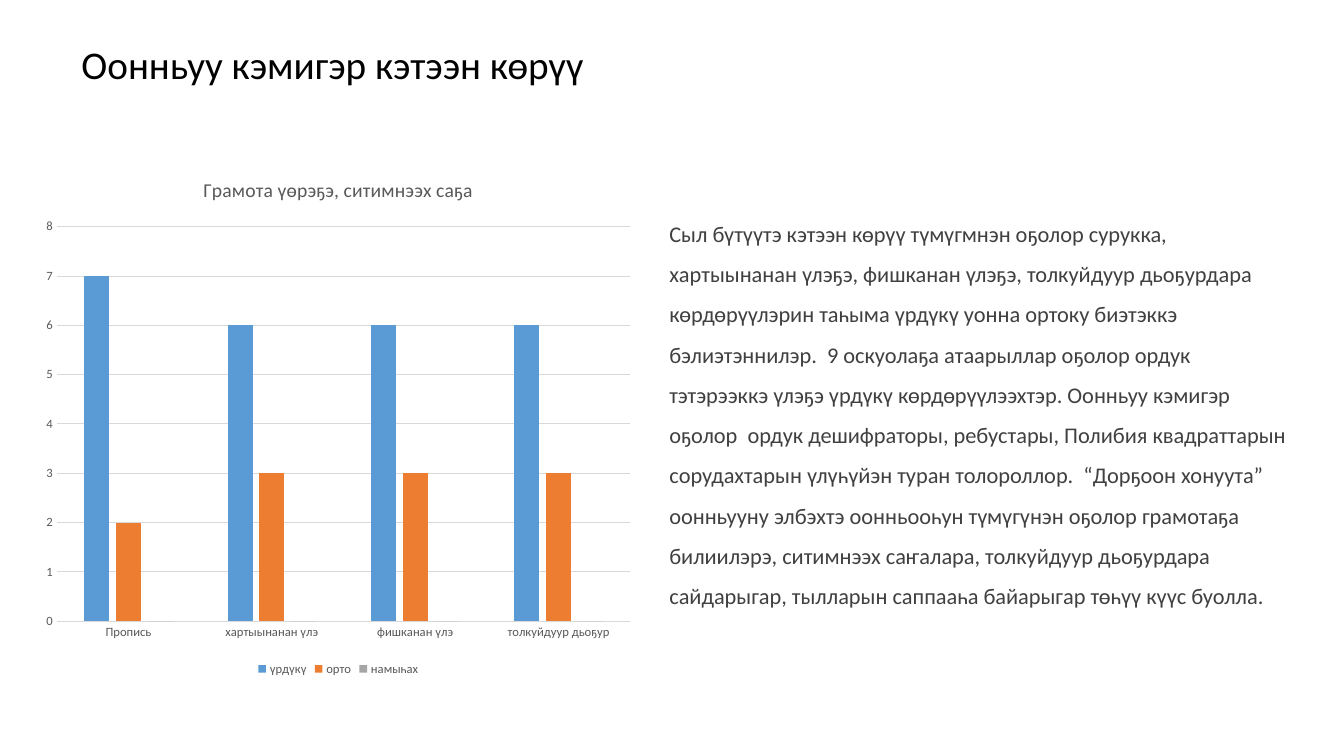
from pptx import Presentation
from pptx.chart.data import CategoryChartData
from pptx.dml.color import RGBColor
from pptx.enum.chart import XL_CHART_TYPE, XL_LEGEND_POSITION, XL_TICK_MARK
from pptx.enum.text import MSO_ANCHOR
from pptx.util import Pt

PX = 9144
FONT = "Calibri"
COLORS = {
    "title": "000000",
    "body": "404040",
    "label": "595959",
    "rule": "D9D9D9",
    "high": "5B9BD5",
    "middle": "ED7D31",
    "low": "A5A5A5",
}
TITLE = "Оонньуу кэмигэр кэтээн көрүү"
CHART_TITLE = "Грамота үөрэҕэ, ситимнээх саҕа"
CATEGORIES = ["Пропись", "хартыынанан үлэ", "фишканан үлэ", "толкуйдуур дьоҕур"]
SERIES = [
    ("үрдүкү", (7, 6, 6, 6), "high"),
    ("орто", (2, 3, 3, 3), "middle"),
    ("намыһах", (0, 0, 0, 0), "low"),
]
BODY = (
    "Сыл бүтүүтэ кэтээн көрүү түмүгмнэн оҕолор сурукка, "
    "хартыынанан үлэҕэ, фишканан үлэҕэ, толкуйдуур дьоҕурдара "
    "көрдөрүүлэрин таһыма үрдүкү уонна ортоку биэтэккэ "
    "бэлиэтэннилэр.  9 оскуолаҕа атаарыллар оҕолор ордук "
    "тэтэрээккэ үлэҕэ үрдүкү көрдөрүүлээхтэр. Оонньуу кэмигэр "
    "оҕолор  ордук дешифраторы, ребустары, Полибия квадраттарын "
    "сорудахтарын үлүһүйэн туран толороллор.  “Дорҕоон хонуута” "
    "оонньууну элбэхтэ оонньооһун түмүгүнэн оҕолор грамотаҕа "
    "билиилэрэ, ситимнээх саҥалара, толкуйдуур дьоҕурдара "
    "сайдарыгар, тылларын саппааһа байарыгар төһүү күүс буолла."
)


def color(name):
    """Return the named colour."""
    return RGBColor.from_string(COLORS[name])


def emu(box):
    """Turn a box in px into EMU lengths."""
    return [length * PX for length in box]


def style_font(font, size, name):
    """Set the typeface, size and colour of a font."""
    font.name = FONT
    font.size = Pt(size)
    font.bold = False
    font.color.rgb = color(name)


def style_line(line):
    """Make a line a thin grey rule."""
    line.color.rgb = color("rule")
    line.width = Pt(0.75)


def add_text(slide, box, text, size, name, spacing, anchor):
    """Place one wrapped paragraph in the box."""
    frame = slide.shapes.add_textbox(*emu(box)).text_frame
    frame.word_wrap = True
    frame.vertical_anchor = anchor
    paragraph = frame.paragraphs[0]
    paragraph.line_spacing = spacing
    run = paragraph.add_run()
    run.text = text
    style_font(run.font, size, name)


def style_axes(chart):
    """Style the category and value axes."""
    for axis in (chart.category_axis, chart.value_axis):
        axis.major_tick_mark = XL_TICK_MARK.NONE
        axis.minor_tick_mark = XL_TICK_MARK.NONE
        style_font(axis.tick_labels.font, 9, "label")
    style_line(chart.category_axis.format.line)
    value_axis = chart.value_axis
    value_axis.format.line.fill.background()
    value_axis.minimum_scale = 0
    value_axis.maximum_scale = 8
    value_axis.major_unit = 1
    style_line(value_axis.major_gridlines.format.line)


def add_results_chart(slide, box):
    """Place the clustered column chart in the box."""
    data = CategoryChartData()
    data.categories = CATEGORIES
    for name, values, _ in SERIES:
        data.add_series(name, values)
    chart = slide.shapes.add_chart(
        XL_CHART_TYPE.COLUMN_CLUSTERED, *emu(box), data
    ).chart
    style_font(chart.font, 10, "title")

    run = chart.chart_title.text_frame.paragraphs[0].add_run()
    run.text = CHART_TITLE
    style_font(run.font, 14, "label")
    chart.chart_title.include_in_layout = False

    chart.has_legend = True
    chart.legend.position = XL_LEGEND_POSITION.BOTTOM
    chart.legend.include_in_layout = False
    style_font(chart.legend.font, 9, "label")

    plot = chart.plots[0]
    plot.gap_width = 219
    plot.overlap = -27
    plot.vary_by_categories = False
    for series, (_, _, fill) in zip(plot.series, SERIES):
        series.format.fill.solid()
        series.format.fill.fore_color.rgb = color(fill)
    style_axes(chart)


def main():
    """Build and save the slide."""
    presentation = Presentation()
    presentation.slide_width, presentation.slide_height = emu((1333, 750))
    slide = presentation.slides.add_slide(presentation.slide_layouts[6])
    add_text(slide, (71, 28, 1150, 76), TITLE, 28, "title", 0.9, MSO_ANCHOR.MIDDLE)
    add_results_chart(slide, (34, 156, 603, 519))
    add_text(slide, (654, 200, 639, 476), BODY, 16, "body", 1.5, MSO_ANCHOR.TOP)
    presentation.save("out.pptx")


if __name__ == "__main__":
    main()
